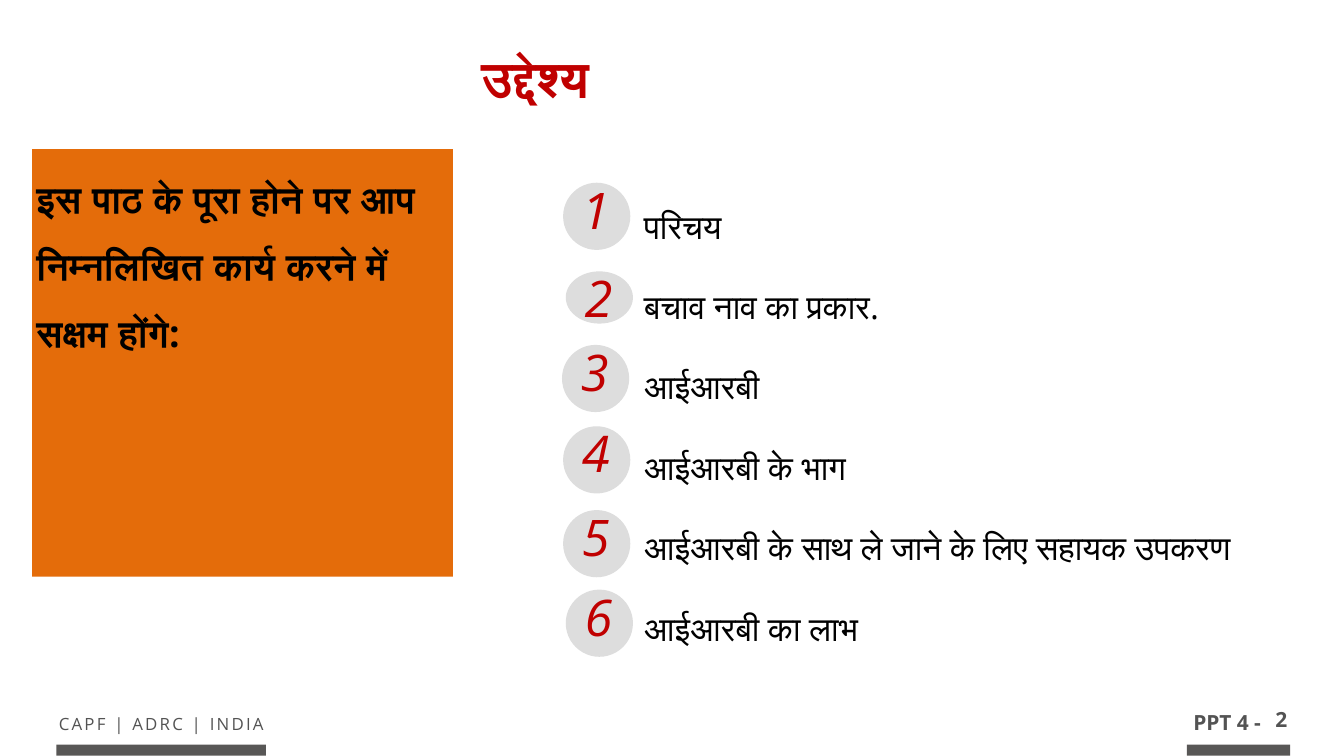
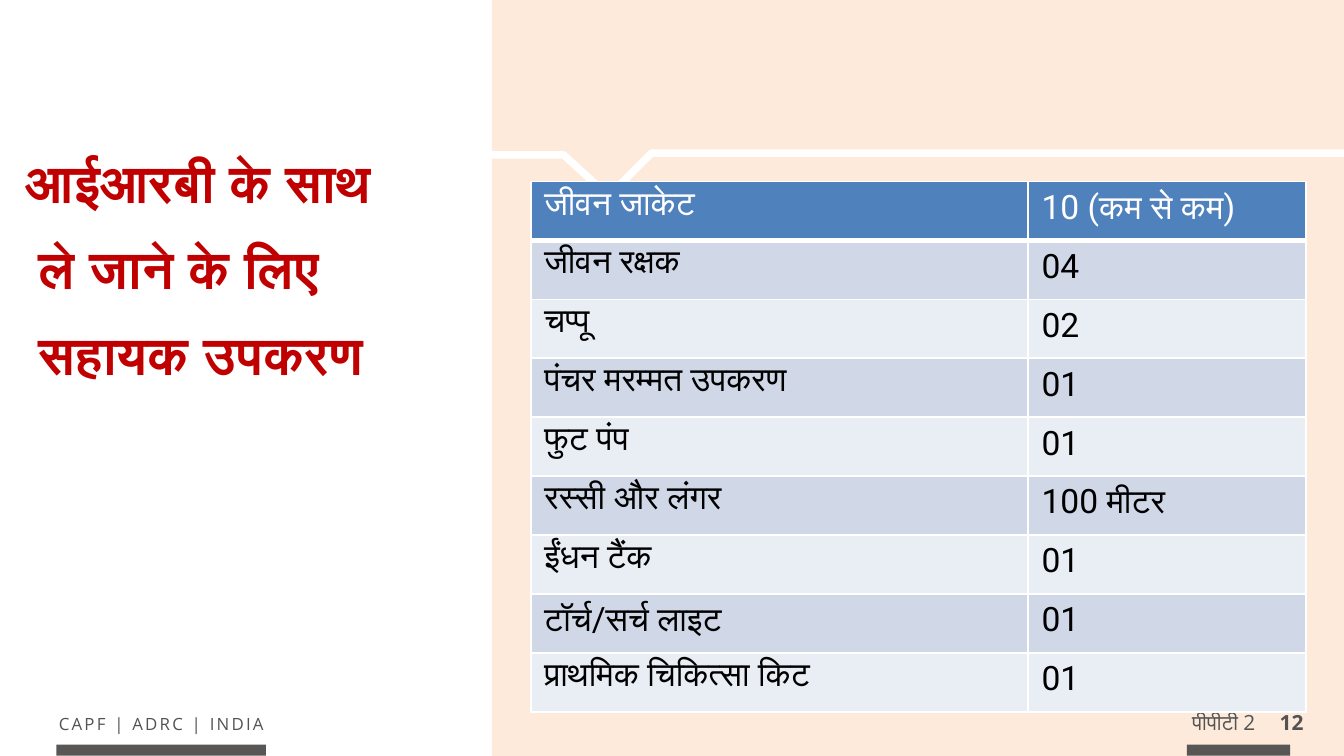
from lxml.etree import SubElement
from pptx import Presentation
from pptx.dml.color import RGBColor
from pptx.enum.shapes import MSO_SHAPE as Shape
from pptx.enum.text import MSO_ANCHOR as Anchor, MSO_AUTO_SIZE as AutoSize, PP_ALIGN as Align
from pptx.oxml.ns import qn
from pptx.util import Pt

WHITE = RGBColor(0xFF, 0xFF, 0xFF)
BLACK = RGBColor(0, 0, 0)
RED = RGBColor(0xC0, 0, 0)
ORANGE = RGBColor(0xE4, 0x6C, 0x0A)
PEACH = RGBColor(0xFD, 0xEA, 0xDA)
BADGE_GREY = RGBColor(0xDD, 0xDD, 0xDD)
TEXT_GREY = RGBColor(0x53, 0x53, 0x53)
BAR_GREY = RGBColor(0x58, 0x57, 0x56)
HEADER_BLUE = RGBColor(0x4F, 0x81, 0xBD)
BAND_FILLS = (RGBColor(0xD0, 0xD8, 0xE8), RGBColor(0xE9, 0xED, 0xF4))

OPEN_SANS = "Open Sans"
ROBOTO = "Roboto"
SLIDE_WIDTH, SLIDE_HEIGHT = 720, 405

FOOTER = "CAPF | ADRC | INDIA"
FOOTER_BARS = [(30.2, 398.9, 112.3, 6), (635.8, 398.9, 55.4, 6)]

OBJECTIVES_TITLE = "उद्देश्य"
OBJECTIVES_INTRO = "इस पाठ के पूरा होने पर आप निम्नलिखित कार्य करने में सक्षम होंगे:"
OBJECTIVES = [
    "परिचय",
    "बचाव नाव का प्रकार.",
    "आईआरबी",
    "आईआरबी के भाग",
    "आईआरबी के साथ ले जाने के लिए सहायक उपकरण",
    "आईआरबी का लाभ",
]
# left, top, height of each number badge
BADGES = [
    (301.7, 97.9, 36), (303.1, 145.4, 28), (301.1, 184.8, 36),
    (301.7, 228.4, 36), (301.7, 273.3, 36), (303.1, 315.9, 36),
]
BADGE_WIDTH = 36

EQUIPMENT_TITLE = ["आईआरबी के साथ", "ले जाने के लिए", "सहायक उपकरण"]
EQUIPMENT = [
    ("जीवन जाकेट", "10 (कम से कम)"),
    ("जीवन रक्षक", "04"),
    ("चप्पू", "02"),
    ("पंचर मरम्मत उपकरण", "01"),
    ("फुट पंप", "01"),
    ("रस्सी और लंगर", "100 मीटर"),
    ("ईंधन टैंक", "01"),
    ("टॉर्च/सर्च लाइट", "01"),
    ("प्राथमिक चिकित्सा किट", "01"),
]
COLUMN_WIDTHS = (266.4, 149)
ROW_HEIGHT = 31.6
NOTCH = [(224.6, 82.8), (302.4, 82.8), (326.2, 105.1), (349.2, 82.1), (SLIDE_WIDTH, 82.1)]


def add_run(paragraph, text, size, color, font=OPEN_SANS, bold=False, italic=False):
    run = paragraph.add_run()
    run.text = text
    run.font.name = font
    run.font.size = Pt(size)
    run.font.color.rgb = color
    run.font.bold = bold
    run.font.italic = italic
    return run


def prepare_frame(shape, inset=2.2, wrap=True):
    frame = shape.text_frame
    frame.auto_size = AutoSize.NONE
    frame.word_wrap = wrap
    frame.vertical_anchor = Anchor.TOP
    frame.margin_left = frame.margin_right = Pt(inset)
    frame.margin_top = frame.margin_bottom = Pt(inset)
    return frame


def place(shape, box):
    shape.left, shape.top, shape.width, shape.height = map(Pt, box)


def fill_lines(shape, lines, size, color, spacing=None, gap=0, **style):
    """Write one left-aligned paragraph per line and return the paragraphs."""
    frame = prepare_frame(shape)
    paragraphs = []
    for index, line in enumerate(lines):
        paragraph = frame.add_paragraph() if index else frame.paragraphs[0]
        paragraph.alignment = Align.LEFT
        paragraph.space_before = Pt(0)
        paragraph.space_after = Pt(gap)
        if spacing:
            paragraph.line_spacing = Pt(spacing)
        add_run(paragraph, line, size, color, **style)
        paragraphs.append(paragraph)
    return paragraphs


def add_label(shapes, box, text, size, color, align=Align.LEFT, inset=2.2, wrap=True, **style):
    label = shapes.add_textbox(*map(Pt, box))
    paragraph = prepare_frame(label, inset, wrap).paragraphs[0]
    paragraph.alignment = align
    return add_run(paragraph, text, size, color, **style)


def add_filled(shapes, kind, box, color):
    shape = shapes.add_shape(kind, *map(Pt, box))
    shape.shadow.inherit = False
    shape.fill.solid()
    shape.fill.fore_color.rgb = color
    shape.line.fill.background()
    return shape


def add_footer(slide):
    run = add_label(slide.shapes, (18, 380.2, 136.8, 16), FOOTER, 9, TEXT_GREY, Align.CENTER)
    run.font._element.set("spc", "120")
    for bar in FOOTER_BARS:
        add_filled(slide.shapes, Shape.RECTANGLE, bar, BAR_GREY)


def add_badge(slide, number, left, top, height):
    group = slide.shapes.add_group_shape()
    add_filled(group.shapes, Shape.OVAL, (left, top, BADGE_WIDTH, height), BADGE_GREY)
    add_label(group.shapes, (left + 7.9, top - 4.3, 24.5, height + 12),
              str(number), 27, RED, italic=True)


def set_borders(cell, bottom):
    properties = cell._tc.get_or_add_tcPr()
    for index, side in enumerate(("lnL", "lnR", "lnT", "lnB")):
        width = bottom if side == "lnB" else 1
        border = SubElement(properties, qn("a:" + side), w=str(Pt(width)))
        fill = SubElement(border, qn("a:solidFill"))
        SubElement(fill, qn("a:srgbClr"), val=str(WHITE))
        properties.insert(index, border)


def add_equipment_table(slide):
    box = (284.4, 97.2, sum(COLUMN_WIDTHS), ROW_HEIGHT * len(EQUIPMENT))
    table = slide.shapes.add_table(len(EQUIPMENT), len(COLUMN_WIDTHS), *map(Pt, box)).table
    for column, width in zip(table.columns, COLUMN_WIDTHS):
        column.width = Pt(width)
    for row_index, values in enumerate(EQUIPMENT):
        is_header = row_index == 0
        table.rows[row_index].height = Pt(ROW_HEIGHT)
        for column_index, value in enumerate(values):
            cell = table.cell(row_index, column_index)
            cell.fill.solid()
            cell.fill.fore_color.rgb = HEADER_BLUE if is_header else BAND_FILLS[(row_index - 1) % 2]
            set_borders(cell, 3 if is_header else 1)
            add_run(cell.text_frame.paragraphs[0], value, 18,
                    WHITE if is_header else BLACK, ROBOTO)


def build_objectives(presentation):
    slide = presentation.slides.add_slide(presentation.slide_layouts[1])
    add_footer(slide)
    add_label(slide.shapes, (636.5, 378, 41.8, 18), "PPT 4 -", 11.2, TEXT_GREY,
              Align.CENTER, wrap=False, bold=True)
    add_label(slide.shapes, (676.8, 372.2, 18, 26), "2", 11.2, TEXT_GREY, inset=6.5, wrap=False, bold=True)

    title, body = slide.placeholders
    place(title, (255.6, 23, 159, 37.4))
    fill_lines(title, [OBJECTIVES_TITLE], 27, RED, bold=True)

    panel = add_filled(slide.shapes, Shape.RECTANGLE, (17.3, 79.9, 225.4, 229), ORANGE)
    fill_lines(panel, [OBJECTIVES_INTRO], 20, BLACK, spacing=36, bold=True)

    place(body, (306.7, 86.4, 398.9, 266.4))
    for paragraph in fill_lines(body, OBJECTIVES, 18, BLACK, spacing=43.1):
        paragraph.level = 1
        properties = paragraph._p.get_or_add_pPr()
        properties.set("marL", str(Pt(36)))
        properties.set("indent", "0")
        SubElement(properties, qn("a:buNone"))
    for number, badge in enumerate(BADGES, 1):
        add_badge(slide, number, *badge)


def build_equipment(presentation):
    slide = presentation.slides.add_slide(presentation.slide_layouts[5])
    add_filled(slide.shapes, Shape.RECTANGLE, (263.5, 0, SLIDE_WIDTH - 263.5, SLIDE_HEIGHT), PEACH)
    builder = slide.shapes.build_freeform(*NOTCH[0], scale=Pt(1))
    builder.add_line_segments(NOTCH[1:], close=False)
    notch = builder.convert_to_shape()
    notch.shadow.inherit = False
    notch.fill.background()
    notch.line.color.rgb = WHITE
    notch.line.width = Pt(4)

    add_footer(slide)
    add_label(slide.shapes, (636.5, 378, 40.3, 18), "पीपीटी 2 -", 11.2, TEXT_GREY)
    add_label(slide.shapes, (676.8, 373.7, 30.2, 20), "12", 11.2, TEXT_GREY,
              Align.CENTER, inset=6.5, bold=True)

    title = slide.shapes.title
    place(title, (11.5, 82.1, 218.9, 152.6))
    lines = fill_lines(title, EQUIPMENT_TITLE, 28, RED, spacing=30, gap=16, font=ROBOTO, bold=True)
    for paragraph in lines[1:]:
        paragraph._p.get_or_add_pPr().set("marL", str(Pt(7)))
    add_equipment_table(slide)


def main():
    presentation = Presentation()
    presentation.slide_width = Pt(SLIDE_WIDTH)
    presentation.slide_height = Pt(SLIDE_HEIGHT)
    build_objectives(presentation)
    build_equipment(presentation)
    presentation.save("out.pptx")


if __name__ == "__main__":
    main()
